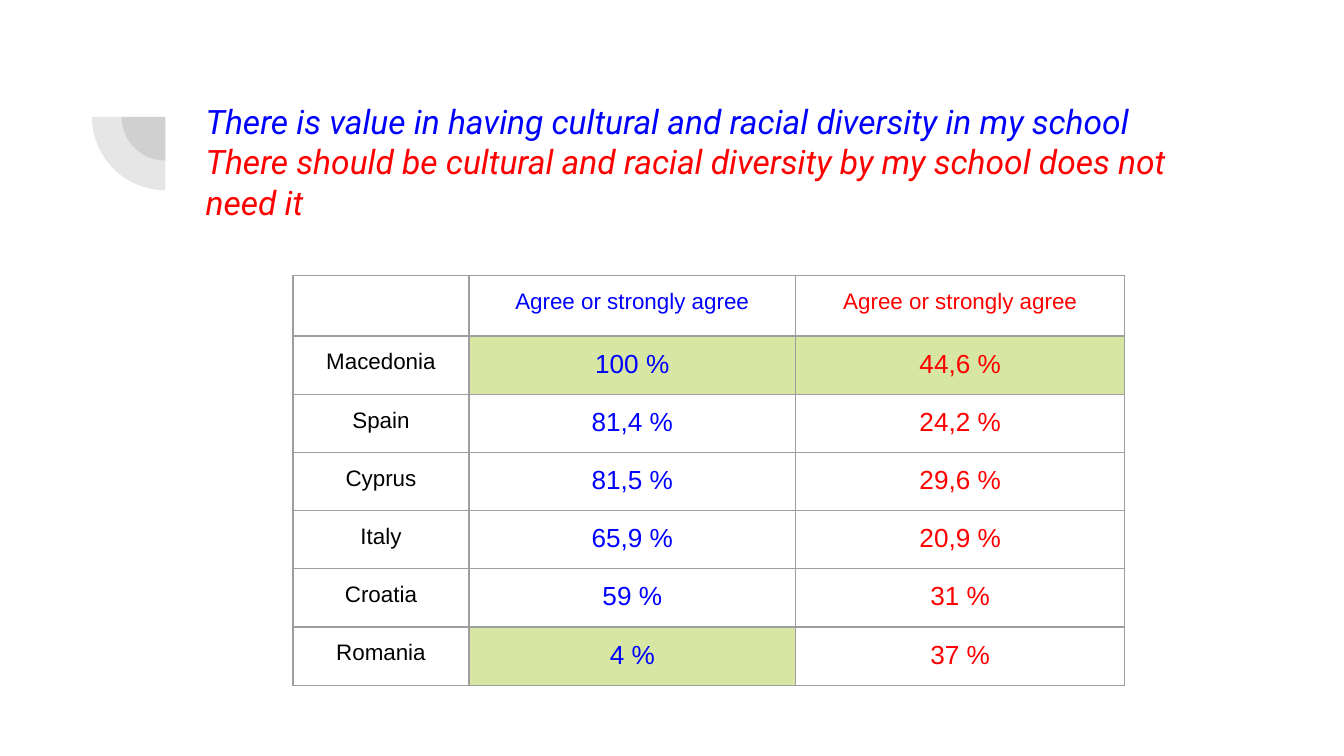
from lxml.etree import SubElement
from pptx import Presentation
from pptx.dml.color import RGBColor
from pptx.enum.shapes import MSO_SHAPE
from pptx.enum.text import MSO_ANCHOR, MSO_AUTO_SIZE, PP_ALIGN
from pptx.oxml.ns import qn
from pptx.util import Inches, Pt

BLUE, RED, BLACK = "0000FF", "FF0000", "000000"
GREEN, GREY, DARK = "D7E6A3", "9E9E9E", "424242"

TITLE = [
    ("There is value in having cultural and racial diversity in my school", BLUE),
    ("There should be cultural and racial diversity by my school does not need it", RED),
]
ROWS = [
    ("", "Agree or strongly agree", "Agree or strongly agree"),
    ("Macedonia", "100 %", "44,6 %"),
    ("Spain", "81,4 %", "24,2 %"),
    ("Cyprus", "81,5 %", "29,6 %"),
    ("Italy", "65,9 %", "20,9 %"),
    ("Croatia", "59 %", "31 %"),
    ("Romania", "4 %", "37 %"),
]
CELL_FILLS = {(1, 1): GREEN, (1, 2): GREEN, (6, 1): GREEN, (6, 2): "FFFFFF"}
COL_WIDTHS = (1.31, 2.43, 2.45)
HEADER_HEIGHT, TABLE_HEIGHT = 0.45, 3.05


def rgb(color):
    return RGBColor.from_string(color)


def set_font(p, name, size, color, italic=False):
    p.font.name = name
    p.font.size = Pt(size)
    p.font.italic = italic
    p.font.color.rgb = rgb(color)


def set_margins(obj):
    obj.margin_left = obj.margin_right = Inches(0.1)
    obj.margin_top = obj.margin_bottom = Inches(0.1)


def add_quarter(slide, cx, cy, size):
    """Add a translucent quarter disc around the centre (cx, cy)."""
    sp = slide.shapes.add_shape(MSO_SHAPE.PIE, Inches(cx - size / 2),
                                Inches(cy - size / 2), Inches(size), Inches(size))
    sp.rotation = 270
    sp.adjustments[0], sp.adjustments[1] = 108, 162
    sp.shadow.inherit = False
    sp.line.fill.background()
    sp.fill.solid()
    sp.fill.fore_color.rgb = rgb(DARK)
    fill_color = sp.fill._xPr.find(qn("a:solidFill"))[0]
    SubElement(fill_color, qn("a:alpha"), val="13000")


def add_title(slide):
    sp = slide.shapes.title
    sp.left, sp.top = Inches(1.43), Inches(0.65)
    sp.width, sp.height = Inches(7.69), Inches(1.09)
    tf = sp.text_frame
    tf.word_wrap = True
    tf.auto_size = MSO_AUTO_SIZE.NONE
    tf.vertical_anchor = MSO_ANCHOR.TOP
    set_margins(tf)
    tf.text = "\n".join(text for text, _ in TITLE)
    for p, (_, color) in zip(tf.paragraphs, TITLE):
        p.alignment = PP_ALIGN.LEFT
        set_font(p, "Roboto", 18, color, italic=True)


def set_borders(cell):
    # Borders must come before the fill in the cell properties
    tcPr = cell._tc.get_or_add_tcPr()
    for i, side in enumerate(("lnL", "lnR", "lnT", "lnB")):
        ln = tcPr.makeelement(qn(f"a:{side}"), {"w": str(Pt(0.75))})
        fill = SubElement(ln, qn("a:solidFill"))
        SubElement(fill, qn("a:srgbClr"), val=GREY)
        tcPr.insert(i, ln)


def fill_cell(cell, text, size, color, background):
    if background:
        cell.fill.solid()
        cell.fill.fore_color.rgb = rgb(background)
    else:
        cell.fill.background()
    set_borders(cell)
    if text:
        set_margins(cell)
        cell.text = text
        p = cell.text_frame.paragraphs[0]
        p.alignment = PP_ALIGN.CENTER
        set_font(p, "Arial", size, color)


def add_results_table(slide):
    table = slide.shapes.add_table(
        len(ROWS), len(COL_WIDTHS), Inches(2.18), Inches(2.05),
        Inches(sum(COL_WIDTHS)), Inches(TABLE_HEIGHT)).table
    table.first_row = table.horz_banding = False
    for column, width in zip(table.columns, COL_WIDTHS):
        column.width = Inches(width)
    body_height = (TABLE_HEIGHT - HEADER_HEIGHT) / (len(ROWS) - 1)
    for r, row in enumerate(ROWS):
        table.rows[r].height = Inches(body_height if r else HEADER_HEIGHT)
        for c, text in enumerate(row):
            size = 14 if r and c else 12
            fill_cell(table.cell(r, c), text, size, (BLACK, BLUE, RED)[c],
                      CELL_FILLS.get((r, c)))


def main():
    # Widescreen 16:9 page
    prs = Presentation()
    prs.slide_width = Inches(10)
    prs.slide_height = Inches(10 * 9 / 16)
    slide = prs.slides.add_slide(prs.slide_layouts[5])

    # Corner ornament
    for size in (0.65, 1.09):
        add_quarter(slide, 1.23, 0.87, size)

    # Title and survey results
    add_title(slide)
    add_results_table(slide)
    prs.save("out.pptx")


if __name__ == "__main__":
    main()
